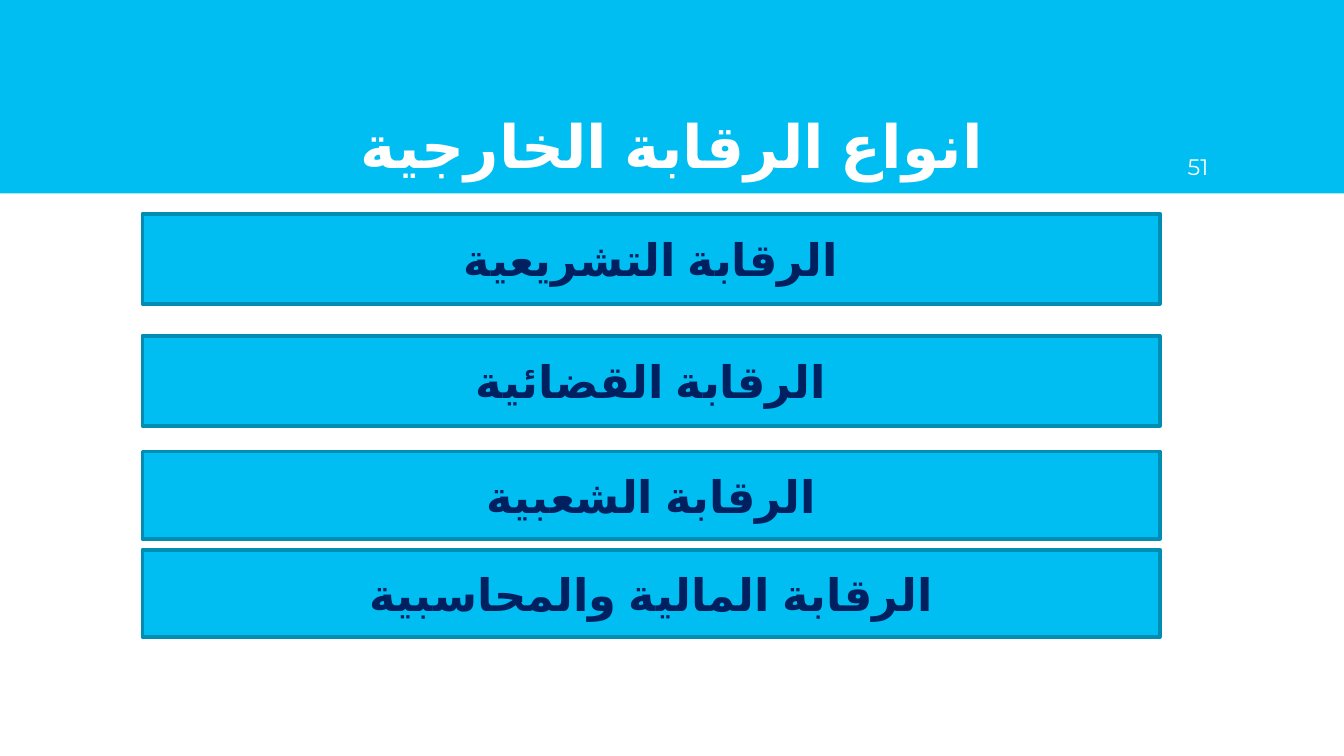
from lxml import etree
from pptx import Presentation
from pptx.dml.color import RGBColor
from pptx.enum.lang import MSO_LANGUAGE_ID
from pptx.enum.shapes import MSO_SHAPE
from pptx.enum.text import MSO_ANCHOR, PP_ALIGN
from pptx.oxml.ns import qn
from pptx.util import Inches, Pt

RECT = MSO_SHAPE.RECTANGLE
BOTTOM, MIDDLE = MSO_ANCHOR.BOTTOM, MSO_ANCHOR.MIDDLE
CENTER, RIGHT = PP_ALIGN.CENTER, PP_ALIGN.RIGHT
ARABIC = MSO_LANGUAGE_ID.ARABIC

COLORS = {"cyan": "00BEF2", "border": "008DB3", "navy": "002060", "white": "FFFFFF"}

# Label, top and height of each control type
BARS = [
    ("الرقابة التشريعية", 1.59, 0.67),
    ("الرقابة القضائية", 2.5, 0.67),
    ("الرقابة الشعبية", 3.36, 0.65),
    ("الرقابة المالية والمحاسبية", 4.09, 0.65),
]


def rgb(name):
    return RGBColor.from_string(COLORS[name])


def write(sp, text, size, color, align, anchor, font="Arial", lang=ARABIC,
          bold=False, rtl=False):
    tf = sp.text_frame
    tf.word_wrap = True
    tf.vertical_anchor = anchor
    p = tf.paragraphs[0]
    p.alignment = align
    if rtl:
        p._p.get_or_add_pPr().set("rtl", "1")
    r = p.add_run()
    r.text = text
    r.font.size = Pt(size)
    r.font.bold = bold
    r.font.name = font
    r.font.color.rgb = rgb(color)
    if lang:
        r.font.language_id = lang
    # Arabic letters take the complex-script font
    etree.SubElement(r._r.get_or_add_rPr(), qn("a:cs")).set("typeface", font)


def add_rect(s, x, y, w, h, border=None):
    sp = s.shapes.add_shape(RECT, Inches(x), Inches(y), Inches(w), Inches(h))
    sp.shadow.inherit = False
    sp.fill.solid()
    sp.fill.fore_color.rgb = rgb("cyan")
    if border:
        sp.line.color.rgb = rgb(border)
        sp.line.width = Pt(2)
    else:
        sp.line.fill.background()
    return sp


def add_header_text(s, x, w, text, size, align, **style):
    sp = s.shapes.add_textbox(Inches(x), Inches(0.71), Inches(w), Inches(0.73))
    tf = sp.text_frame
    tf.margin_left = tf.margin_right = tf.margin_top = tf.margin_bottom = Inches(0.1)
    write(sp, text, size, "white", align, BOTTOM, **style)


def main():
    # Widescreen 16:9 page
    prs = Presentation()
    prs.slide_width = Inches(10)
    prs.slide_height = Inches(10) * 9 // 16
    s = prs.slides.add_slide(prs.slide_layouts[6])

    # Header band with title and page number
    add_rect(s, 0, 0, 10, 1.44)
    add_header_text(s, 1.1, 7.8, "انواع الرقابة الخارجية", 32, CENTER, bold=True)
    add_header_text(s, 8.49, 0.6, "51", 12, RIGHT, font="Montserrat", lang=None)

    # Bars for the types of external control
    for label, top, height in BARS:
        bar = add_rect(s, 1.06, top, 7.57, height, border="border")
        write(bar, label, 24, "navy", CENTER, MIDDLE, bold=True, rtl=True)

    prs.save("out.pptx")


if __name__ == "__main__":
    main()
